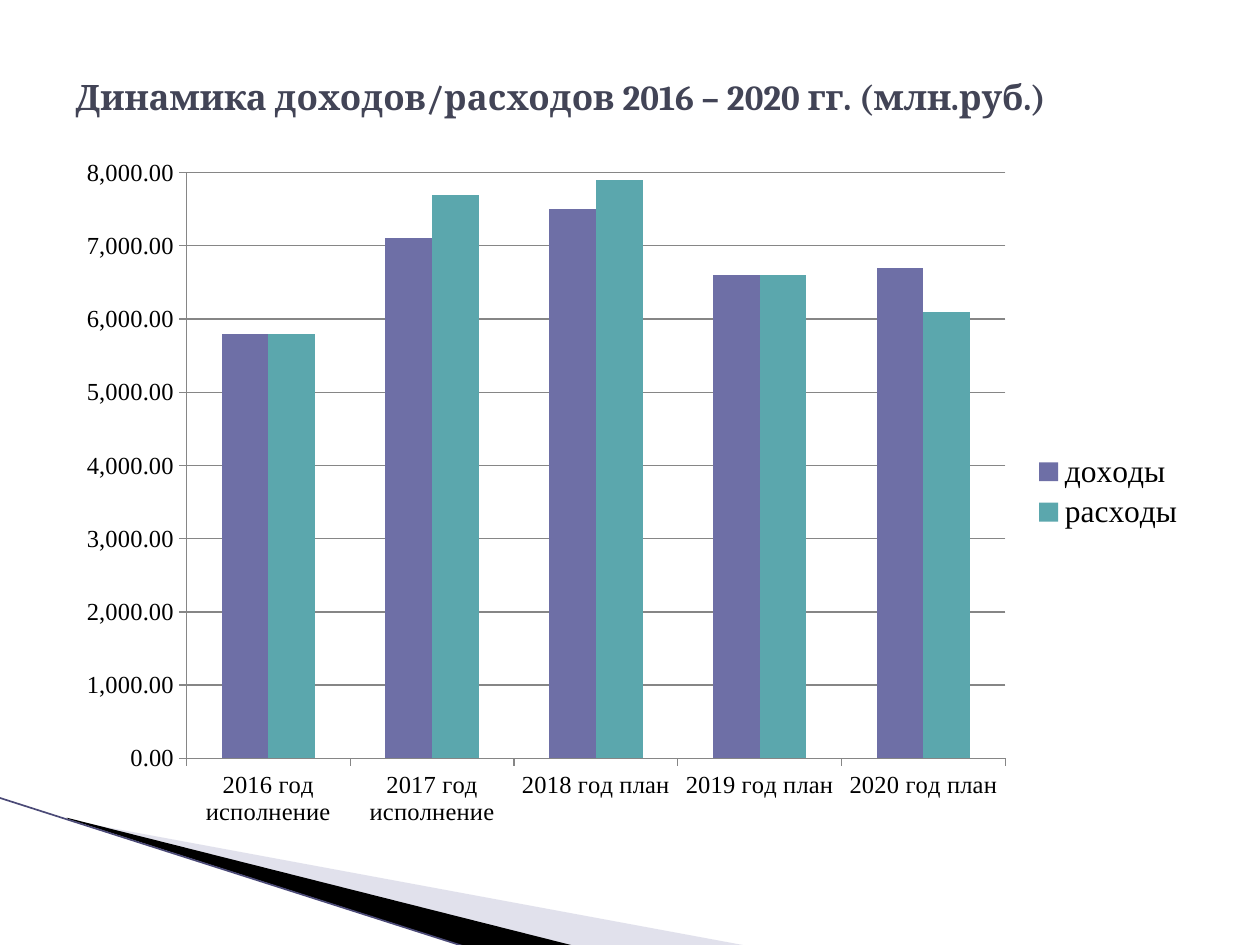
from lxml import etree
from pptx import Presentation
from pptx.chart.data import CategoryChartData
from pptx.dml.color import RGBColor
from pptx.enum.chart import XL_CHART_TYPE as ChartType, XL_LEGEND_POSITION as LegendPos
from pptx.enum.chart import XL_TICK_MARK as Tick
from pptx.enum.shapes import MSO_CONNECTOR as Connector
from pptx.enum.text import MSO_ANCHOR as Anchor, PP_ALIGN as Align
from pptx.oxml.ns import qn
from pptx.util import Inches, Pt

GRAY = "868686"
SERIF = "Times New Roman"


def rgb(color):
    return RGBColor.from_string(color)


def set_font(font, size, name=SERIF, color="000000", bold=False):
    font.size, font.name, font.bold = Pt(size), name, bold
    font.color.rgb = rgb(color)


def add_text(tf, text, align=Align.LEFT, **fmt):
    p = tf.paragraphs[0]
    p.alignment = align
    r = p.add_run()
    r.text = text
    set_font(r.font, **fmt)


class SlideBuilder:
    def __init__(self, prs):
        self.s = prs.slides.add_slide(prs.slide_layouts[5])
        self.s.background.fill.solid()
        self.s.background.fill.fore_color.rgb = rgb("FFFFFF")

    def title(self, text, x, y, w, h, **fmt):
        sp = self.s.shapes.title
        sp.left, sp.top, sp.width, sp.height = map(Inches, (x, y, w, h))
        tf = sp.text_frame
        tf.word_wrap = True
        tf.vertical_anchor = Anchor.MIDDLE
        add_text(tf, text, **fmt)

    def polygon(self, points, color, alpha=None):
        start, *rest = [(Inches(x), Inches(y)) for x, y in points]
        fb = self.s.shapes.build_freeform(*start)
        fb.add_line_segments(rest, close=True)
        sp = fb.convert_to_shape()
        sp.shadow.inherit = False
        sp.line.fill.background()
        sp.fill.solid()
        sp.fill.fore_color.rgb = rgb(color)
        if alpha is not None:
            clr = sp.fill._xPr.find(".//" + qn("a:srgbClr"))
            etree.SubElement(clr, qn("a:alpha")).set("val", str(alpha * 1000))

    def line(self, x1, y1, x2, y2, color, width):
        cx = self.s.shapes.add_connector(
            Connector.STRAIGHT, *map(Inches, (x1, y1, x2, y2)))
        cx.line.color.rgb = rgb(color)
        cx.line.width = Pt(width)
        etree.SubElement(cx._element.spPr, qn("a:effectLst"))

    def column_chart(self, cats, series, x, y, w, h, plot_box):
        data = CategoryChartData(number_format="#,##0.00")
        data.categories = cats
        for name, _, values in series:
            data.add_series(name, values)
        chart = self.s.shapes.add_chart(
            ChartType.COLUMN_CLUSTERED, *map(Inches, (x, y, w, h)), data).chart
        chart.has_title = False
        set_font(chart.font, 18, "Noto Sans Mono")

        plot = chart.plots[0]
        plot.gap_width, plot.overlap = 150, 0
        plot.vary_by_categories = False
        for ser, (_, color, _) in zip(plot.series, series):
            ser.format.fill.solid()
            ser.format.fill.fore_color.rgb = rgb(color)

        for axis in (chart.category_axis, chart.value_axis):
            axis.major_tick_mark, axis.minor_tick_mark = Tick.OUTSIDE, Tick.NONE
            axis.format.line.color.rgb = rgb(GRAY)
            set_font(axis.tick_labels.font, 14)
        axis = chart.value_axis
        axis.minimum_scale, axis.maximum_scale, axis.major_unit = 0, 8000, 1000
        axis.has_major_gridlines = True
        axis.major_gridlines.format.line.color.rgb = rgb(GRAY)
        axis.tick_labels.number_format = "#,##0.00"
        axis.tick_labels.number_format_is_linked = False

        chart.has_legend = True
        chart.legend.position = LegendPos.RIGHT
        chart.legend.include_in_layout = False
        set_font(chart.legend.font, 18)

        # Plot area as fractions of the chart
        px, py, pw, ph = plot_box
        self.place_plot(chart, ((px - x) / w, (py - y) / h, pw / w, ph / h))

    def place_plot(self, chart, box):
        area = chart._chartSpace.find(".//" + qn("c:plotArea"))
        for old in area.findall(qn("c:layout")):
            area.remove(old)
        layout = etree.Element(qn("c:layout"))
        area.insert(0, layout)
        manual = etree.SubElement(layout, qn("c:manualLayout"))
        settings = [("layoutTarget", "inner"), ("xMode", "edge"), ("yMode", "edge")]
        for tag, val in settings + list(zip("xywh", box)):
            etree.SubElement(manual, qn("c:" + tag)).set("val", str(val))


def main():
    prs = Presentation()
    prs.slide_width, prs.slide_height = Inches(10), Inches(7.5)
    slide = SlideBuilder(prs)

    # Corner decoration
    slide.polygon([(0.55, 6.51), (5.95, 7.51), (4.56, 7.51), (0.55, 6.5)],
                  "B6B6D1", alpha=40)
    slide.polygon([(0.53, 6.49), (4.57, 7.51), (3.72, 7.52), (0.54, 6.5)], "000000")
    slide.line(-0.01, 6.33, 3.71, 7.52, "4B4A77", 0.95)

    # Income and spending by year
    cats = ["2016 год исполнение", "2017 год исполнение",
            "2018 год план", "2019 год план", "2020 год план"]
    series = [("доходы", "6E6FA6", (5800, 7100, 7500, 6600, 6700)),
              ("расходы", "5BA7AD", (5800, 7700, 7900, 6600, 6100))]
    slide.column_chart(cats, series, 0.51, 1.15, 9, 5.51,
                       plot_box=(1.48, 1.37, 6.5, 4.65))

    # Title
    slide.title("Динамика доходов/расходов 2016 – 2020 гг. (млн.руб.)",
                0.5, 0.3, 8.91, 0.93,
                size=20, name="Cambria", color="424456", bold=True)

    prs.save("out.pptx")


if __name__ == "__main__":
    main()
